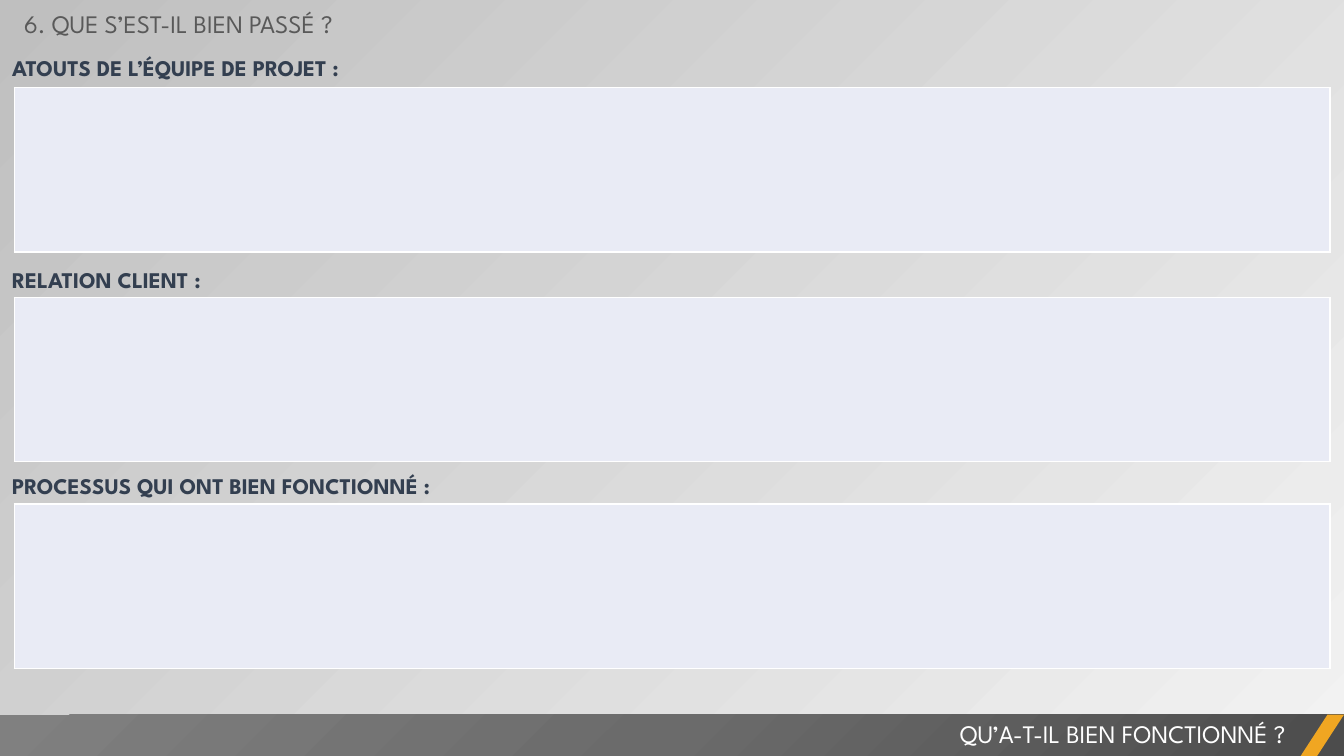
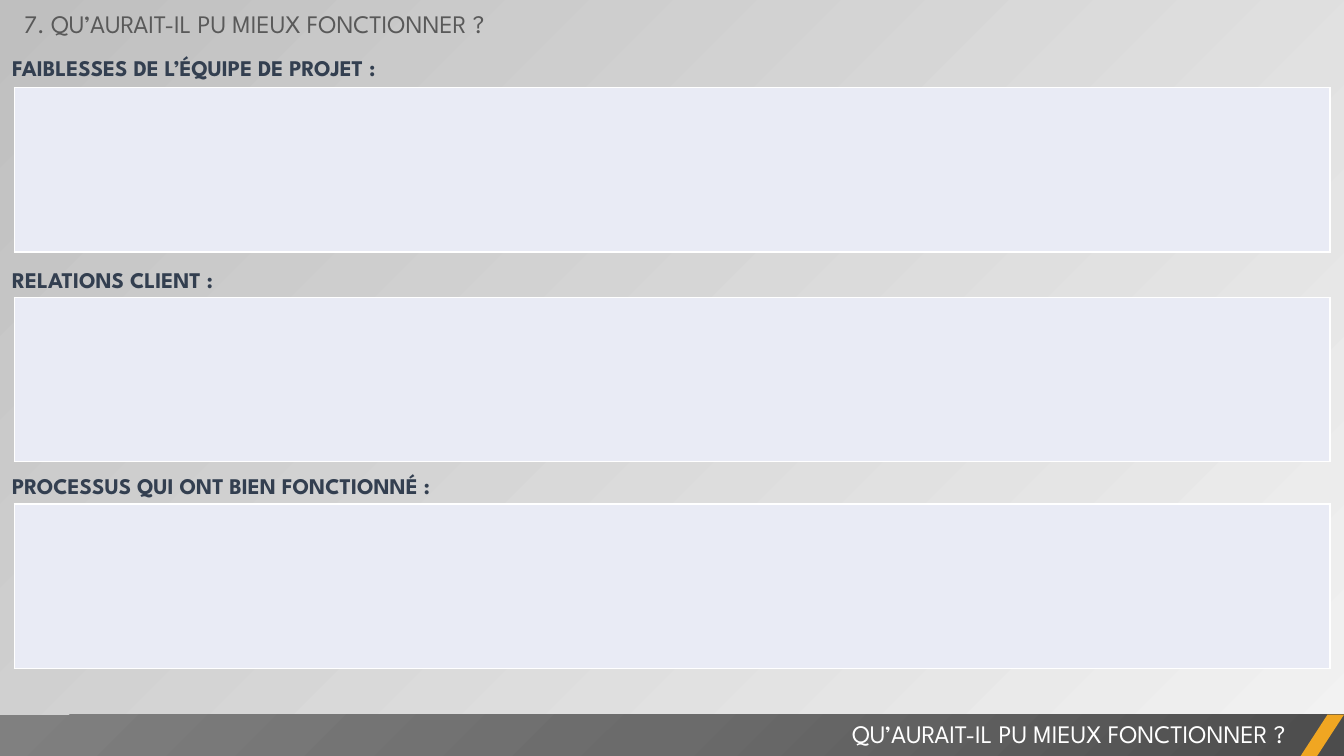
from lxml import etree
from pptx import Presentation
from pptx.dml.color import RGBColor
from pptx.enum.shapes import MSO_SHAPE
from pptx.enum.text import MSO_AUTO_SIZE, PP_ALIGN
from pptx.oxml.ns import qn
from pptx.util import Inches, Pt

RECTANGLE, PARALLELOGRAM = MSO_SHAPE.RECTANGLE, MSO_SHAPE.PARALLELOGRAM
LEFT, RIGHT = PP_ALIGN.LEFT, PP_ALIGN.RIGHT
GROW = MSO_AUTO_SIZE.SHAPE_TO_FIT_TEXT

SLIDES = [
    {
        "title": "6. QUE S’EST-IL BIEN PASSÉ ?",
        "footer": "QU’A-T-IL BIEN FONCTIONNÉ ?",
        "labels": ["ATOUTS DE L’ÉQUIPE DE PROJET :", "RELATION CLIENT :",
                   "PROCESSUS QUI ONT BIEN FONCTIONNÉ :"],
    },
    {
        "title": "7. QU’AURAIT-IL PU MIEUX FONCTIONNER ?",
        "footer": "QU’AURAIT-IL PU MIEUX FONCTIONNER ?",
        "labels": ["FAIBLESSES DE L’ÉQUIPE DE PROJET :", "RELATIONS CLIENT :",
                   "PROCESSUS QUI ONT BIEN FONCTIONNÉ :"],
    },
]

COLORS = {
    "title": "595959", "label": "333F50", "white": "FFFFFF",
    "box": "E9EBF5", "accent": "F0A622",
}
PAGE_STOPS = [(0, "F2F2F2", 40), (100, "BFBFBF", 100)]
BAND_STOPS = [(0, "4C4C4C", 100), (50, "6B6B6B", 100), (100, "808080", 100)]
FONT = "League Spartan"

SLIDE_W, SLIDE_H = 13.33, 7.5
MARGIN = 0.14
BOX_W, BOX_H = SLIDE_W - 2 * MARGIN, 1.63
SECTIONS = [(0.45, 0.87, Pt(21.5)), (2.55, 2.95, Pt(21.5)), (4.57, 5, 1.2)]
BAND_TOP = 7.09
BAND_H = SLIDE_H - BAND_TOP
ACCENT_W = 0.43


def rgb(name):
    return RGBColor.from_string(COLORS[name])


def sub(parent, tag, **attrs):
    el = etree.SubElement(parent, qn(tag))
    for key, value in attrs.items():
        el.set(key, str(value))
    return el


def set_gradient(owner, fill, stops, angle=None):
    fill.solid()
    solid = owner.find(".//" + qn("a:solidFill"))
    grad = etree.Element(qn("a:gradFill"), rotWithShape="1")
    stop_list = sub(grad, "a:gsLst")
    for pos, color, alpha in stops:
        stop = sub(stop_list, "a:gs", pos=pos * 1000)
        clr = sub(stop, "a:srgbClr", val=color)
        if alpha < 100:
            sub(clr, "a:alpha", val=alpha * 1000)
    if angle is not None:
        sub(grad, "a:lin", ang=angle * 60000, scaled=0)
    else:
        radial = sub(grad, "a:path", path="circle")
        sub(radial, "a:fillToRect", l=100000, t=100000)
    solid.getparent().replace(solid, grad)


def add_text(s, text, x, y, w, color, size=18, bold=False, align=LEFT):
    box = s.shapes.add_textbox(Inches(x), Inches(y), Inches(w), Inches(0.4))
    tf = box.text_frame
    tf.text = text
    tf.word_wrap = True
    tf.auto_size = GROW
    p = tf.paragraphs[0]
    p.alignment = align
    font = p.runs[0].font
    font.name, font.size, font.bold = FONT, Pt(size), bold
    font.color.rgb = rgb(color)
    return tf


def add_label(s, text, y, spacing):
    tf = add_text(s, text, 0, y, 7.63, "label", size=16, bold=True)
    tf.margin_left = tf.margin_right = Inches(0.12)
    tf.margin_top = tf.margin_bottom = Inches(0.06)
    p = tf.paragraphs[0]
    p.line_spacing = spacing
    p.space_before = Pt(3.2)


def add_answer_box(s, y):
    table = s.shapes.add_table(1, 1, Inches(MARGIN), Inches(y),
                               Inches(BOX_W), Inches(BOX_H)).table
    table.first_row = table.horz_banding = False
    cell = table.cell(0, 0)
    tc_pr = cell._tc.get_or_add_tcPr()
    for side in ("a:lnL", "a:lnR", "a:lnT", "a:lnB"):
        ln = sub(tc_pr, side, w=Pt(1))
        sub(sub(ln, "a:solidFill"), "a:srgbClr", val=COLORS["white"])
    cell.fill.solid()
    cell.fill.fore_color.rgb = rgb("box")


def add_bar(s, kind, x, w):
    sp = s.shapes.add_shape(kind, Inches(x), Inches(BAND_TOP), Inches(w), Inches(BAND_H))
    sp.shadow.inherit = False
    sp.line.fill.background()
    return sp


def add_footer(s, text):
    band = add_bar(s, RECTANGLE, 0, SLIDE_W)
    set_gradient(band.element.spPr, band.fill, BAND_STOPS)
    add_text(s, text, 5.25, 7.08, 7.6, "white", align=RIGHT)
    accent = add_bar(s, PARALLELOGRAM, SLIDE_W - ACCENT_W, ACCENT_W)
    accent.adjustments[0] = 0.65
    accent.fill.solid()
    accent.fill.fore_color.rgb = rgb("accent")


def main():
    prs = Presentation()
    prs.slide_width, prs.slide_height = Inches(SLIDE_W), Inches(SLIDE_H)
    for content in SLIDES:
        s = prs.slides.add_slide(prs.slide_layouts[6])
        set_gradient(s.element, s.background.fill, PAGE_STOPS, angle=225)
        add_text(s, content["title"], MARGIN, 0.03, 5.31, "title")
        for label, (label_y, box_y, spacing) in zip(content["labels"], SECTIONS):
            add_answer_box(s, box_y)
            add_label(s, label, label_y, spacing)
        add_footer(s, content["footer"])
    prs.save("out.pptx")


if __name__ == "__main__":
    main()
